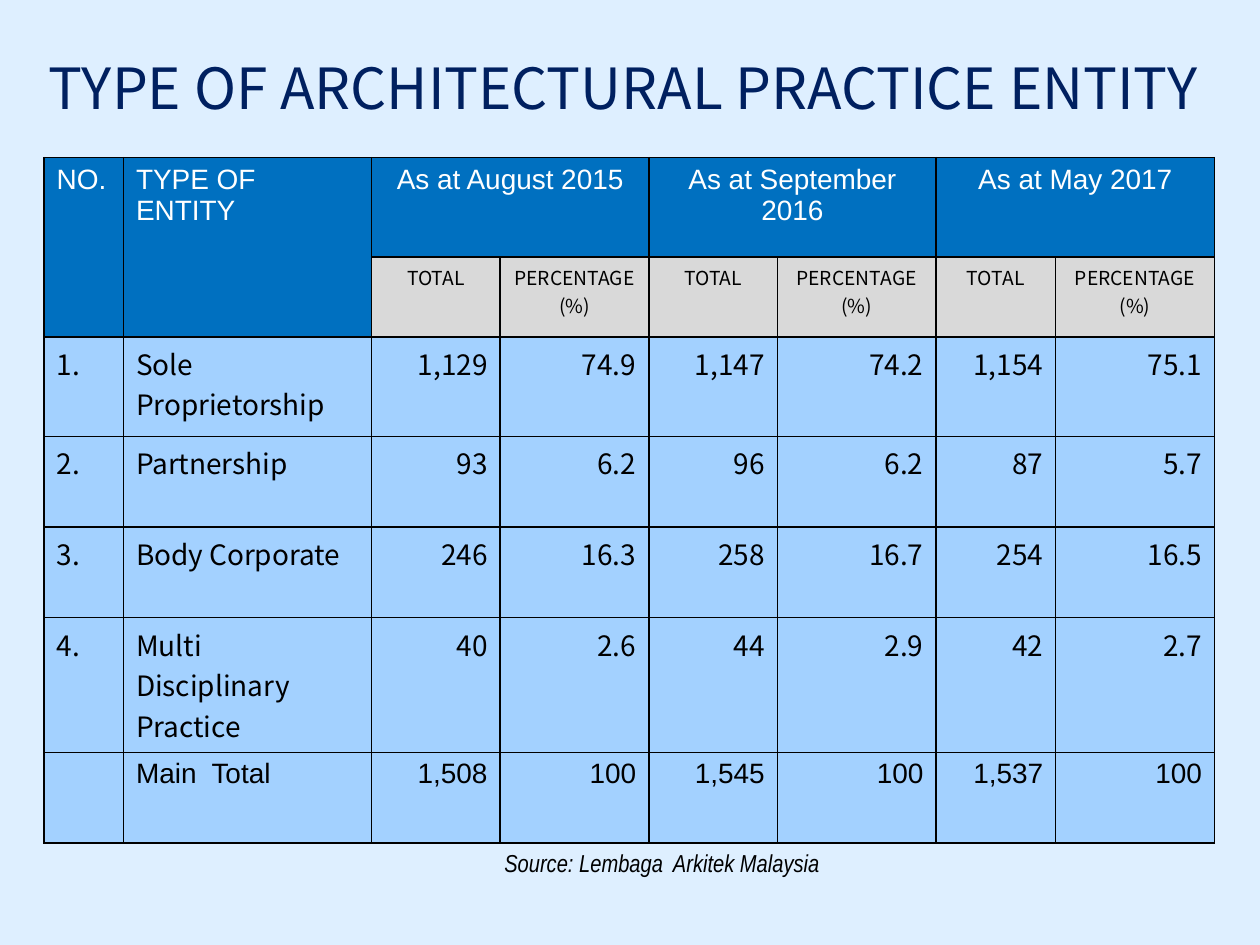
from dataclasses import dataclass

from lxml import etree
from pptx import Presentation
from pptx.dml.color import RGBColor
from pptx.enum.text import MSO_ANCHOR, PP_ALIGN
from pptx.oxml.ns import qn
from pptx.util import Inches, Pt

LEFT, CENTER, RIGHT = PP_ALIGN.LEFT, PP_ALIGN.CENTER, PP_ALIGN.RIGHT
BOTTOM, MIDDLE = MSO_ANCHOR.BOTTOM, MSO_ANCHOR.MIDDLE
SANS, ARIAL, NARROW = "Noto Sans CJK SC", "Arial", "Arial Narrow"
BLACK, WHITE, NAVY = "000000", "FFFFFF", "002060"
BACKGROUND, HEADER_BLUE, HEADER_GRAY, BODY_BLUE = "DEEFFF", "0070C0", "D9D9D9", "A3D1FF"
BORDER_WIDTH = Pt(1)

COLUMN_WIDTHS = [0.63, 1.97, 1.02, 1.18, 1.02, 1.26, 0.95, 1.26]
ROW_HEIGHTS = [0.79, 0.58, 0.79, 0.72, 0.72, 1.07, 0.72]
LABEL_HEADERS = ["NO.", "TYPE OF ENTITY"]
PERIODS = ["As at August 2015", "As at September 2016", "As at May 2017"]
MEASURES = ["TOTAL", "PERCENTAGE (%)"]


@dataclass(frozen=True)
class Entity:
    number: str
    name: str
    figures: tuple[str, ...]
    font: str = SANS


ENTITIES = [
    Entity("1.", "Sole Proprietorship", ("1,129", "74.9", "1,147", "74.2", "1,154", "75.1")),
    Entity("2.", "Partnership", ("93", "6.2", "96", "6.2", "87", "5.7")),
    Entity("3.", "Body Corporate", ("246", "16.3", "258", "16.7", "254", "16.5")),
    Entity("4.", "Multi Disciplinary Practice", ("40", "2.6", "44", "2.9", "42", "2.7")),
    Entity("", "Main  Total", ("1,508", "100", "1,545", "100", "1,537", "100"), ARIAL),
]


def color(value: str) -> RGBColor:
    return RGBColor.from_string(value)


def write_text(frame, text: str, *, size: float = 16, font: str = SANS,
               ink: str = BLACK, align=LEFT, italic: bool = False) -> None:
    para = frame.paragraphs[0]
    para.alignment = align
    if not text:
        para.font.size = Pt(size)
        return
    span = para.add_run()
    span.text = text
    span.font.size = Pt(size)
    span.font.name = font
    span.font.italic = italic
    span.font.color.rgb = color(ink)


def add_text_box(page, left: float, top: float, width: float, height: float,
                 text: str, anchor, **text_format) -> None:
    box = page.shapes.add_textbox(Inches(left), Inches(top), Inches(width), Inches(height))
    frame = box.text_frame
    frame.word_wrap = True
    frame.vertical_anchor = anchor
    frame.margin_left = frame.margin_right = frame.margin_top = frame.margin_bottom = 0
    write_text(frame, text, align=CENTER, **text_format)


def style_cell(cell, fill: str) -> None:
    cell.fill.solid()
    cell.fill.fore_color.rgb = color(fill)
    properties = cell._tc.get_or_add_tcPr()
    for index, side in enumerate(("lnL", "lnR", "lnT", "lnB")):
        line = etree.Element(qn(f"a:{side}"), w=str(BORDER_WIDTH))
        solid = etree.SubElement(line, qn("a:solidFill"))
        etree.SubElement(solid, qn("a:srgbClr"), val=BLACK)
        properties.insert(index, line)


def row_fill(row: int, column: int) -> str:
    if row == 0 or (row == 1 and column < len(LABEL_HEADERS)):
        return HEADER_BLUE
    return HEADER_GRAY if row == 1 else BODY_BLUE


def add_headers(table) -> None:
    header_format = {"font": ARIAL, "ink": WHITE}
    for column, label in enumerate(LABEL_HEADERS):
        cell = table.cell(0, column)
        cell.merge(table.cell(1, column))
        write_text(cell.text_frame, label, **header_format)
    for index, period in enumerate(PERIODS):
        first = len(LABEL_HEADERS) + index * len(MEASURES)
        cell = table.cell(0, first)
        cell.merge(table.cell(0, first + len(MEASURES) - 1))
        write_text(cell.text_frame, period, align=CENTER, **header_format)
        for offset, measure in enumerate(MEASURES):
            write_text(table.cell(1, first + offset).text_frame, measure, size=11, align=CENTER)


def add_entity(table, row: int, entity: Entity) -> None:
    for column, text in enumerate((entity.number, entity.name, *entity.figures)):
        align = LEFT if column < len(LABEL_HEADERS) else RIGHT
        write_text(table.cell(row, column).text_frame, text, font=entity.font, align=align)


def add_entity_table(page) -> None:
    table = page.shapes.add_table(
        len(ROW_HEIGHTS), len(COLUMN_WIDTHS), Inches(0.35), Inches(1.25),
        Inches(sum(COLUMN_WIDTHS)), Inches(sum(ROW_HEIGHTS))).table
    table.first_row = table.horz_banding = False
    for column, width in zip(table.columns, COLUMN_WIDTHS):
        column.width = Inches(width)
    for row, height in zip(table.rows, ROW_HEIGHTS):
        row.height = Inches(height)
    for row in range(len(ROW_HEIGHTS)):
        for column in range(len(COLUMN_WIDTHS)):
            style_cell(table.cell(row, column), row_fill(row, column))
    add_headers(table)
    for row, entity in enumerate(ENTITIES, start=2):
        add_entity(table, row, entity)


def main() -> None:
    deck = Presentation()
    deck.slide_width, deck.slide_height = Inches(10), Inches(7.5)
    page = deck.slides.add_slide(deck.slide_layouts[6])
    page.background.fill.solid()
    page.background.fill.fore_color.rgb = color(BACKGROUND)
    add_text_box(page, 0.28, 0.33, 9.33, 0.63, "TYPE OF ARCHITECTURAL PRACTICE ENTITY",
                 BOTTOM, size=32.4, ink=NAVY)
    add_entity_table(page)
    add_text_box(page, 1.92, 6.6, 6.67, 0.5, "Source: Lembaga  Arkitek Malaysia",
                 MIDDLE, size=14, font=NARROW, italic=True)
    deck.save("out.pptx")


if __name__ == "__main__":
    main()
